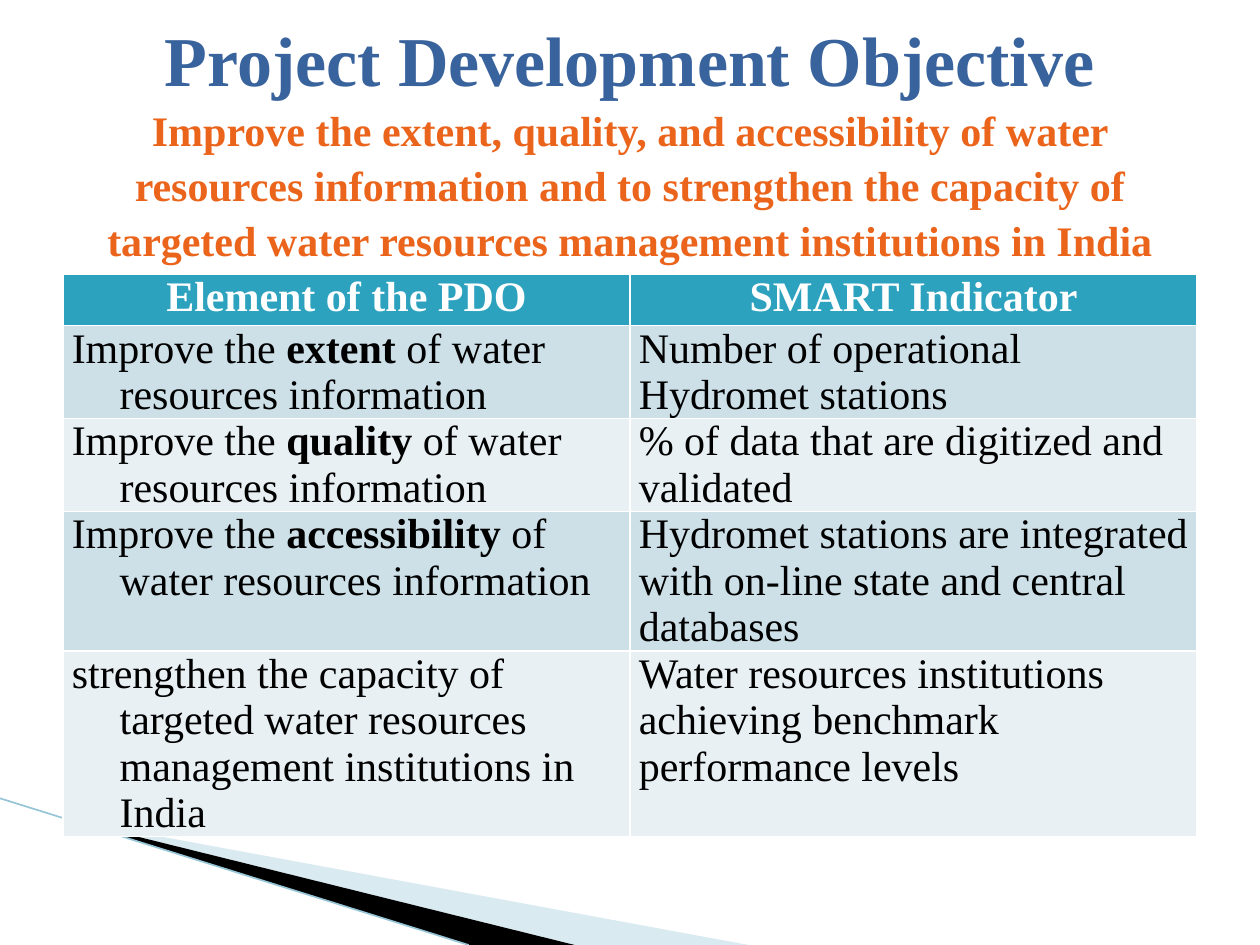
from lxml import etree
from pptx import Presentation
from pptx.dml.color import RGBColor
from pptx.enum.shapes import MSO_CONNECTOR
from pptx.enum.text import MSO_ANCHOR, PP_ALIGN
from pptx.oxml.ns import qn
from pptx.util import Inches, Pt

CENTER, LEFT = PP_ALIGN.CENTER, PP_ALIGN.LEFT
MIDDLE, STRAIGHT = MSO_ANCHOR.MIDDLE, MSO_CONNECTOR.STRAIGHT
WIDE, HIGH = Inches(10), Inches(7.5)
FONT = "Times New Roman"
BANDS = ["CDE0E8", "E8F0F4"]

# Each row: runs of the element as (text, bold), then the indicator
HEADS = ["Element of the PDO", "SMART Indicator"]
ROWS = [
    ([("Improve the ", False), ("extent", True),
      (" of water resources information", False)],
     "Number of operational Hydromet stations"),
    ([("Improve the ", False), ("quality ", True),
      ("of water resources information", False)],
     "% of data that are digitized and validated"),
    ([("Improve the ", False), ("accessibility", True),
      (" of water resources information", False)],
     "Hydromet stations are integrated with on-line state and central databases"),
    ([("strengthen the capacity of targeted water resources management "
       "institutions in India", False)],
     "Water resources institutions achieving benchmark performance levels"),
]


def color(code):
    return RGBColor.from_string(code)


def scale(box):
    """Turn shares of the slide into lengths."""
    x, y, w, h = box
    return int(x * WIDE), int(y * HIGH), int(w * WIDE), int(h * HIGH)


def add_run(para, text, size, code, bold):
    run = para.add_run()
    run.text = text
    font = run.font
    font.name, font.size, font.bold = FONT, Pt(size), bold
    font.color.rgb = color(code)


def add_wedge(slide, points, code, alpha=None):
    build = slide.shapes.build_freeform(*points[0])
    build.add_line_segments(points[1:], close=True)
    wedge = build.convert_to_shape()
    wedge.shadow.inherit = False
    wedge.fill.solid()
    wedge.fill.fore_color.rgb = color(code)
    wedge.line.fill.background()
    if alpha:
        tint = wedge.fill._xPr.find(".//" + qn("a:srgbClr"))
        etree.SubElement(tint, qn("a:alpha"), val=str(alpha * 1000))


def add_corner(slide, box):
    x, y, w, h = scale(box)

    def spot(a, b):
        return int(x + a * w), int(y + b * h)

    # Two wedges that share an edge
    tip, edge = spot(0.09, 0.17), spot(0.76, 1)
    add_wedge(slide, [tip, spot(0.99, 1), edge], "A0CBDC", 40)
    add_wedge(slide, [tip, edge, spot(0.62, 1)], "000000")

    # Thin line along the lower side
    line = slide.shapes.add_connector(STRAIGHT, *spot(0, 0.03), *spot(0.62, 1))
    line.line.color.rgb = color("97C5D8")
    line.line.width = Pt(0.95)
    etree.SubElement(line._element.spPr, qn("a:effectLst"))


def add_title(slide, box):
    frame = slide.shapes.add_textbox(*scale(box)).text_frame
    frame.word_wrap = True
    frame.vertical_anchor = MIDDLE
    para = frame.paragraphs[0]
    para.alignment = CENTER
    para.line_spacing = 1.09
    add_run(para, "Project Development Objective", 40, "39639D", True)
    para.add_line_break()
    add_run(para, "Improve the extent, quality, and accessibility of water "
            "resources information and to strengthen the capacity of targeted "
            "water resources management institutions in India",
            24, "EB641B", True)


def fill_cell(cell, runs, back, code="000000", align=LEFT, hang=False):
    cell.fill.solid()
    cell.fill.fore_color.rgb = color(back)
    cell.margin_left = cell.margin_right = Inches(0.07)
    cell.margin_top = cell.margin_bottom = 0
    para = cell.text_frame.paragraphs[0]
    para.alignment = align
    if hang:
        props = para._p.get_or_add_pPr()
        props.set("marL", str(Inches(0.38)))
        props.set("indent", str(-Inches(0.38)))
    for text, bold in runs:
        add_run(para, text, 24, code, bold)


def add_grid(slide, box):
    table = slide.shapes.add_table(len(ROWS) + 1, 2, *scale(box)).table
    # Rows grow with their text
    for row in table.rows:
        row.height = Inches(0.41)
    for col, head in enumerate(HEADS):
        fill_cell(table.cell(0, col), [(head, True)], "2DA2BF", "FFFFFF", CENTER)
    for num, (goal, sign) in enumerate(ROWS):
        back = BANDS[num % 2]
        fill_cell(table.cell(num + 1, 0), goal, back, hang=True)
        fill_cell(table.cell(num + 1, 1), [(sign, False)], back)


def main():
    deck = Presentation()
    deck.slide_width, deck.slide_height = WIDE, HIGH
    slide = deck.slides.add_slide(deck.slide_layouts[6])
    add_corner(slide, (0, 0.84, 0.6, 0.16))
    add_grid(slide, (0.05, 0.29, 0.9, 0.27))
    add_title(slide, (0.05, 0.02, 0.9, 0.25))
    deck.save("out.pptx")


if __name__ == "__main__":
    main()
